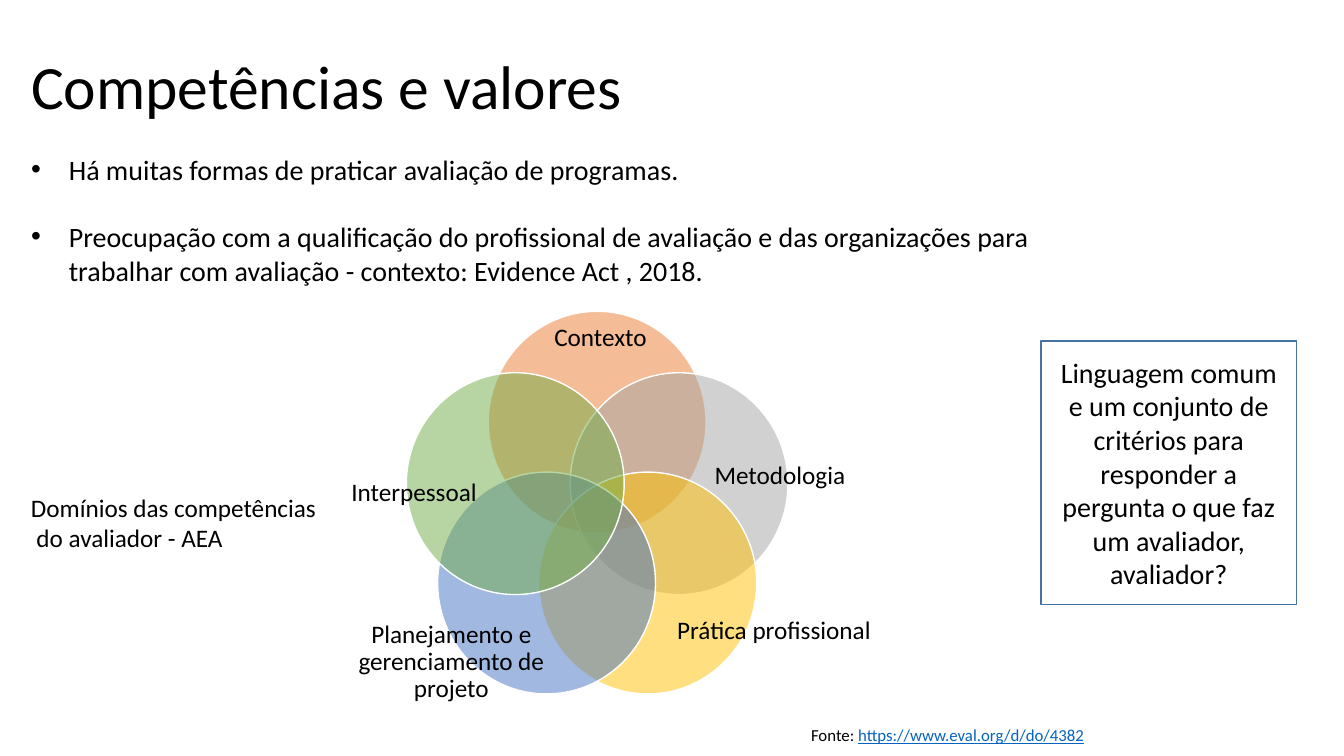
from math import cos, radians, sin

from lxml import etree
from pptx import Presentation
from pptx import util as u
from pptx.dml.color import RGBColor
from pptx.enum import shapes, text
from pptx.oxml.ns import qn

# Content
TITLE = "Competências e valores"
POINTS = [
    "Há muitas formas de praticar avaliação de programas.",
    "Preocupação com a qualificação do profissional de avaliação e das "
    "organizações para trabalhar com avaliação - contexto: Evidence Act , 2018.",
]
# Clockwise from the top: label, colour, label box (left, top, width, height in cm)
DOMAINS = [
    ("Contexto", "ED7D31", (11.96, 6.65, 6.35, 3.76)),
    ("Metodologia", "A5A5A5", (16.81, 9.98, 5.69, 4.06)),
    ("Prática profissional", "FFC000", (16.66, 13.89, 5.69, 4.06)),
    ("Planejamento e gerenciamento de projeto", "4472C4", (8.53, 14.66, 5.69, 4.06)),
    ("Interpessoal", "70AD47", (7.59, 10.39, 5.69, 4.06)),
]
CAPTION = ["Domínios das competências", "do avaliador - AEA"]
ASIDE = ("Linguagem comum e um conjunto de critérios para responder a "
         "pergunta o que faz um avaliador, avaliador?")
SOURCE = ["Fonte: ", "https://www.eval.org/d/do/4382"]

THEME = {
    "font": "Calibri", "ink": "000000", "link": "0563C1",
    "edge": "FFFFFF", "frame": "43739E", "alpha": 50,
    "title": 44, "body": 20, "label": 18, "note": 12,
}

# Venn geometry in cm: centre, ring radii, circle size
MID = (15.05, 12.88)
RING = (2.17, 2.24)
SIZE = (5.49, 5.59)


def rgb(name):
    return RGBColor.from_string(THEME.get(name, name))


def place(shape, box):
    shape.left, shape.top, shape.width, shape.height = map(u.Cm, box)


def add_run(para, words, size, color="ink"):
    run = para.add_run()
    run.text = words
    run.font.name = THEME["font"]
    run.font.size = u.Pt(THEME[size])
    run.font.color.rgb = rgb(color)
    return run


def write(frame, lines, size, align=text.PP_ALIGN.LEFT, anchor=text.MSO_ANCHOR.TOP):
    frame.word_wrap = True
    frame.auto_size = text.MSO_AUTO_SIZE.NONE
    frame.vertical_anchor = anchor
    for i, line in enumerate(lines):
        para = frame.add_paragraph() if i else frame.paragraphs[0]
        para.alignment = align
        para.space_before = u.Pt(0)
        add_run(para, line, size)
    return frame.paragraphs


def indent(para, left, first=0):
    props = para._p.get_or_add_pPr()
    props.set("marL", str(u.Cm(left)))
    props.set("indent", str(u.Cm(first)))


def add_box(slide, box):
    return slide.shapes.add_textbox(*map(u.Cm, box)).text_frame


def add_disc(slide, index, color):
    turn = radians(360 / len(DOMAINS) * index)
    x = MID[0] + RING[0] * sin(turn) - SIZE[0] / 2
    y = MID[1] - RING[1] * cos(turn) - SIZE[1] / 2
    disc = slide.shapes.add_shape(shapes.MSO_SHAPE.OVAL, *map(u.Cm, (x, y, *SIZE)))
    disc.shadow.inherit = False
    disc.fill.solid()
    disc.fill.fore_color.rgb = rgb(color)
    tint = disc._element.spPr.find(qn("a:solidFill"))[0]
    etree.SubElement(tint, qn("a:alpha")).set("val", str(THEME["alpha"] * 1000))
    disc.line.color.rgb = rgb("edge")
    disc.line.width = u.Pt(1)


def add_label(slide, words, box):
    frame = add_box(slide, box)
    frame.margin_left = frame.margin_right = 0
    frame.margin_top = frame.margin_bottom = 0
    paras = write(frame, [words], "label", text.PP_ALIGN.CENTER, text.MSO_ANCHOR.MIDDLE)
    paras[0].line_spacing = 0.9


def main():
    deck = Presentation()
    deck.slide_width, deck.slide_height = u.Cm(33.87), u.Cm(19.05)
    slide = deck.slides.add_slide(deck.slide_layouts[1])

    # Title and bullets
    title, body = slide.placeholders
    place(title, (0.53, 0.41, 29.21, 3.68))
    head = write(title.text_frame, [TITLE], "title", anchor=text.MSO_ANCHOR.MIDDLE)
    head[0].line_spacing = 0.9
    place(body, (0.53, 3.71, 25.96, 4.52))
    for i, para in enumerate(write(body.text_frame, POINTS, "body")):
        indent(para, 0.95, -0.95)
        para.space_before = u.Pt(24 if i else 0)

    # Venn diagram
    for i, (words, color, box) in enumerate(DOMAINS):
        add_disc(slide, i, color)
        add_label(slide, words, box)

    # Diagram caption
    caption = write(add_box(slide, (0.53, 12.27, 12.95, 1.8)), CAPTION, "label")
    indent(caption[1], 0.14)

    # Framed question
    aside = slide.shapes.add_shape(
        shapes.MSO_SHAPE.RECTANGLE, *map(u.Cm, (26.24, 8.59, 6.43, 6.65)))
    aside.shadow.inherit = False
    aside.fill.background()
    aside.line.color.rgb = rgb("frame")
    aside.line.width = u.Pt(1)
    write(aside.text_frame, [ASIDE], "body", text.PP_ALIGN.CENTER, text.MSO_ANCHOR.MIDDLE)

    # Source line
    note = write(add_box(slide, (20.19, 18.14, 8.36, 1.27)), SOURCE[:1], "note")
    add_run(note[0], SOURCE[1], "note", "link").font.underline = True

    deck.save("out.pptx")


if __name__ == "__main__":
    main()
